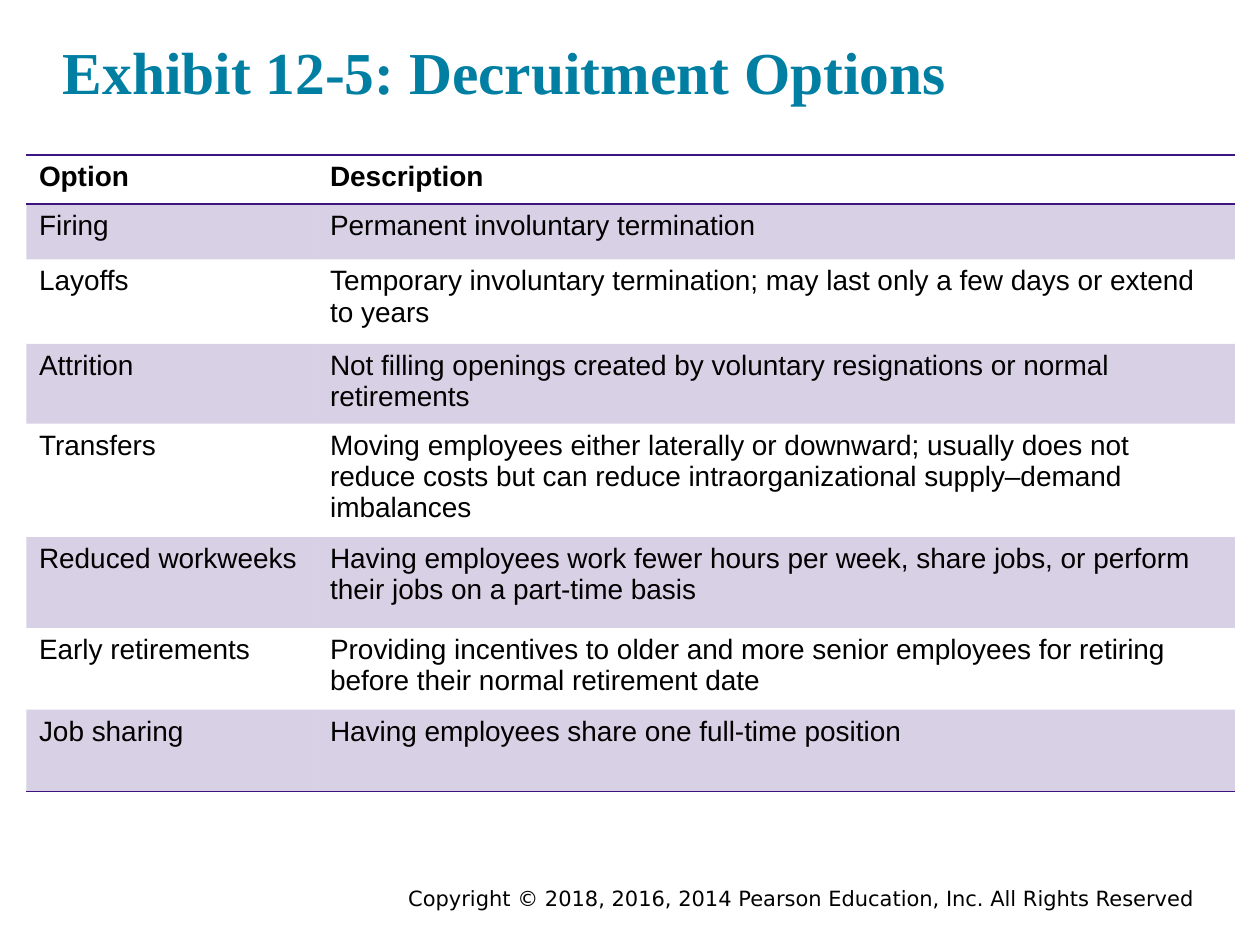
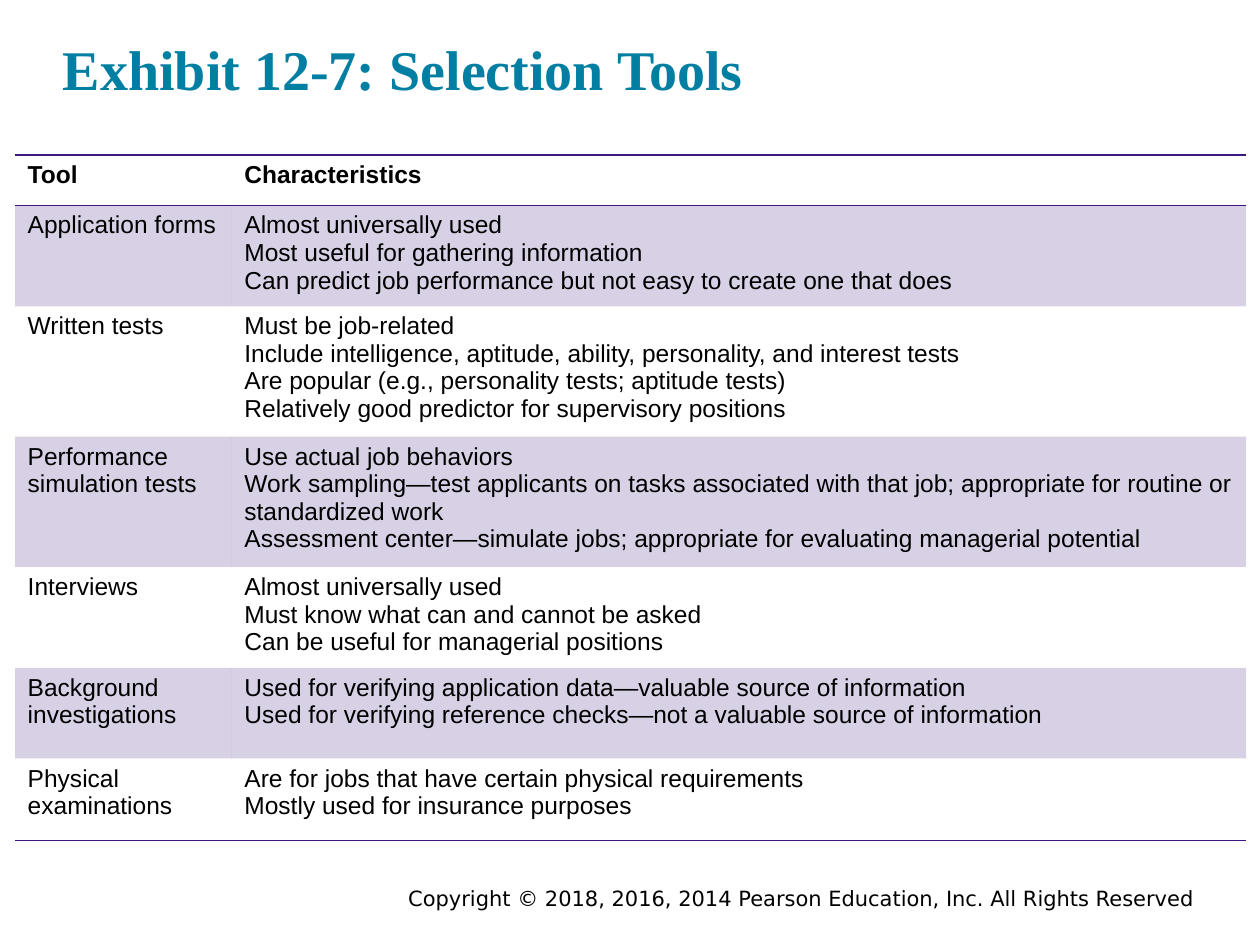
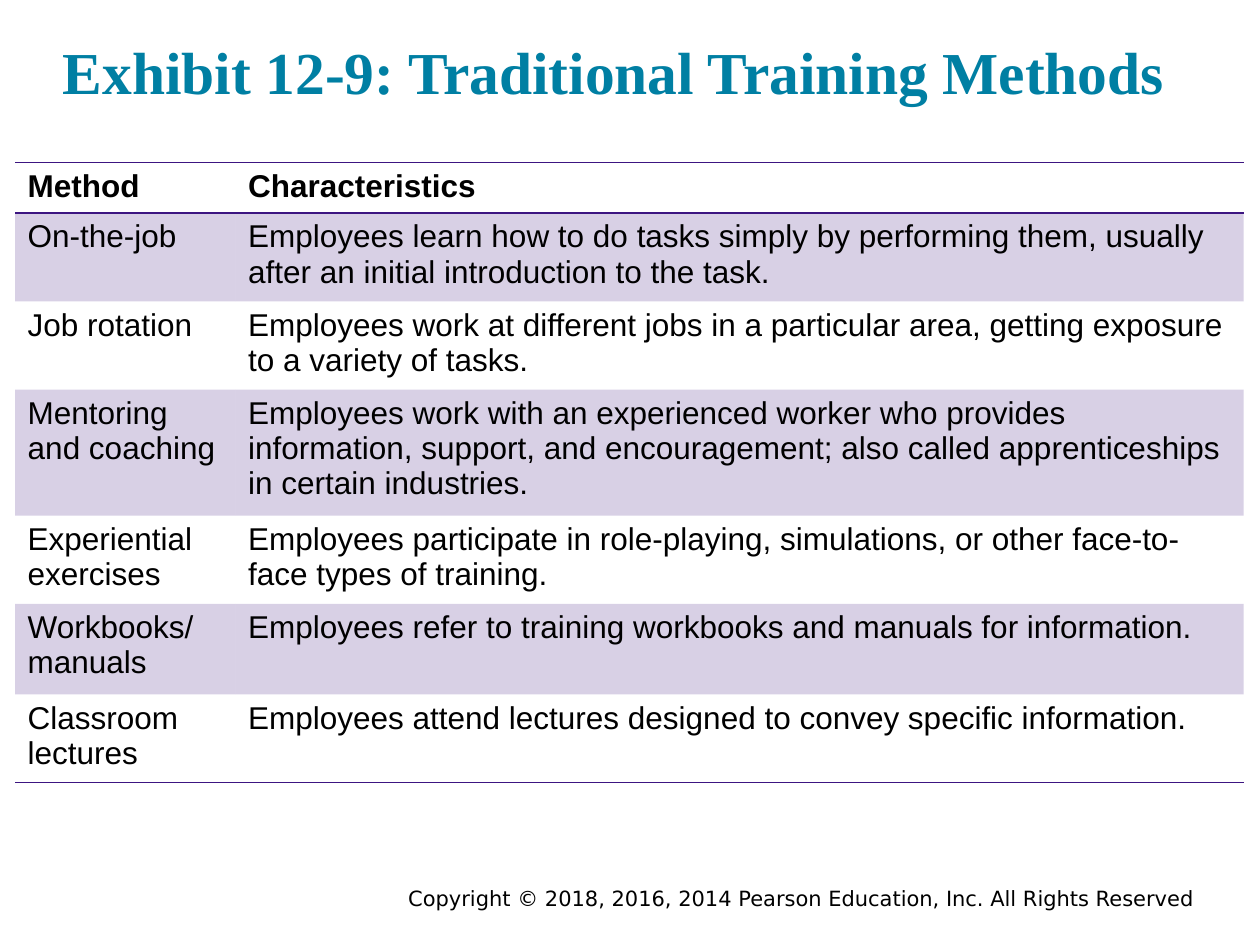
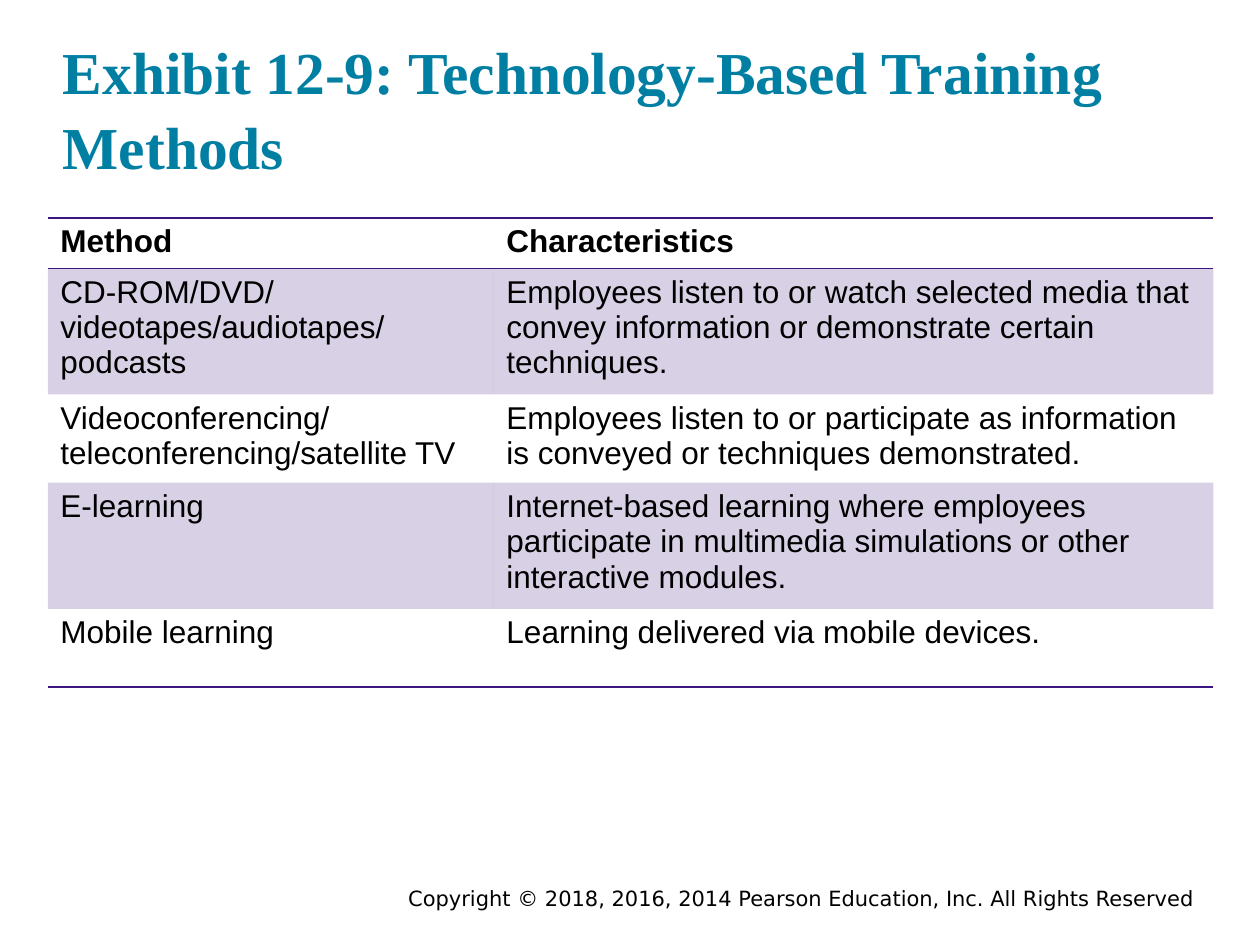
from lxml import etree
from pptx import Presentation
from pptx.dml.color import RGBColor
from pptx.enum.text import MSO_ANCHOR, PP_ALIGN
from pptx.oxml.ns import qn
from pptx.util import Inches, Pt

LEFT, RIGHT = PP_ALIGN.LEFT, PP_ALIGN.RIGHT
TOP = MSO_ANCHOR.TOP

TEAL = RGBColor(0x00, 0x7F, 0xA3)
PURPLE = RGBColor(0x3C, 0x15, 0x81)
BLACK = RGBColor(0x00, 0x00, 0x00)
BAND_OPACITY = 20  # percent
NO_STYLE = "{2D5ABB26-0587-4C30-8999-92F81FD0307C}"

FOOTER = "Copyright © 2018, 2016, 2014 Pearson Education, Inc. All Rights Reserved"

# Content: each row is (first column, second column); a list holds paragraphs
EXHIBITS = [
    {
        "title": "Exhibit 12-5: Decruitment Options", "title_size": 34,
        "at": (0.21, 1.23), "cols": (2.31, 7.28), "size": 16,
        "heights": (0.39, 0.44, 0.67, 0.62, 0.62, 0.72, 0.65, 0.65),
        "rows": [
            ("Option", "Description"),
            ("Firing", "Permanent involuntary termination"),
            ("Layoffs", "Temporary involuntary termination; may last only a few days "
                        "or extend to years"),
            ("Attrition", "Not filling openings created by voluntary resignations "
                          "or normal retirements"),
            ("Transfers", "Moving employees either laterally or downward; usually does "
                          "not reduce costs but can reduce intraorganizational "
                          "supply–demand imbalances"),
            ("Reduced workweeks", "Having employees work fewer hours per week, share "
                                  "jobs, or perform their jobs on a part-time basis"),
            ("Early retirements", "Providing incentives to older and more senior "
                                  "employees for retiring before their normal "
                                  "retirement date"),
            ("Job sharing", "Having employees share one full-time position"),
        ],
    },
    {
        "title": "Exhibit 12-7: Selection Tools", "title_size": 32,
        "at": (0.12, 1.23), "cols": (1.72, 8.05), "size": 14,
        "heights": (0.4, 0.44, 0.67, 0.62, 0.62, 0.72, 0.65),
        "rows": [
            ("Tool", "Characteristics"),
            ("Application forms", [
                "Almost universally used",
                "Most useful for gathering information",
                "Can predict job performance but not easy to create one that does"]),
            ("Written tests", [
                "Must be job-related",
                "Include intelligence, aptitude, ability, personality, and interest tests",
                "Are popular (e.g., personality tests; aptitude tests)",
                "Relatively good predictor for supervisory positions"]),
            ("Performance simulation tests", [
                "Use actual job behaviors",
                "Work sampling—test applicants on tasks associated with that job; "
                "appropriate for routine or standardized work",
                "Assessment center—simulate jobs; appropriate for evaluating "
                "managerial potential"]),
            ("Interviews", [
                "Almost universally used",
                "Must know what can and cannot be asked",
                "Can be useful for managerial positions"]),
            ("Background investigations", [
                "Used for verifying application data—valuable source of information",
                "Used for verifying reference checks—not a valuable source of "
                "information"]),
            ("Physical examinations", [
                "Are for jobs that have certain physical requirements",
                "Mostly used for insurance purposes"]),
        ],
    },
    {
        "title": "Exhibit 12-9: Traditional Training Methods", "title_size": 34,
        "at": (0.12, 1.29), "cols": (1.75, 8), "size": 18,
        "heights": (0.4, 0.44, 0.67, 0.62, 0.62, 0.72, 0.65),
        "rows": [
            ("Method", "Characteristics"),
            ("On-the-job", "Employees learn how to do tasks simply by performing them, "
                           "usually after an initial introduction to the task."),
            ("Job rotation", "Employees work at different jobs in a particular area, "
                             "getting exposure to a variety of tasks."),
            ("Mentoring and coaching", "Employees work with an experienced worker who "
                                       "provides information, support, and "
                                       "encouragement; also called apprenticeships in "
                                       "certain industries."),
            ("Experiential exercises", "Employees participate in role-playing, "
                                       "simulations, or other face-to-face types of "
                                       "training."),
            ("Workbooks/ manuals", "Employees refer to training workbooks and manuals "
                                   "for information."),
            ("Classroom lectures", "Employees attend lectures designed to convey "
                                   "specific information."),
        ],
    },
    {
        "title": "Exhibit 12-9: Technology-Based Training Methods", "title_size": 34,
        "at": (0.38, 1.73), "cols": (3.54, 5.71), "size": 18,
        "heights": (0.4, 0.44, 0.67, 0.62, 0.62),
        "rows": [
            ("Method", "Characteristics"),
            (["CD-ROM/DVD/", "videotapes/audiotapes/", "podcasts"],
             "Employees listen to or watch selected media that convey information or "
             "demonstrate certain techniques."),
            (["Videoconferencing/", "teleconferencing/satellite TV"],
             "Employees listen to or participate as information is conveyed or "
             "techniques demonstrated."),
            ("E-learning", "Internet-based learning where employees participate in "
                           "multimedia simulations or other interactive modules."),
            ("Mobile learning", "Learning delivered via mobile devices."),
        ],
    },
]


def write(tf, text, size, font="Arial", color=BLACK, bold=False, align=LEFT, spacing=None):
    """Fill a text frame with one paragraph per string."""
    paragraphs = [text] if isinstance(text, str) else text
    for i, line in enumerate(paragraphs):
        p = tf.paragraphs[0] if i == 0 else tf.add_paragraph()
        p.alignment = align
        if spacing:
            p.line_spacing = spacing
        r = p.add_run()
        r.text = line
        r.font.size, r.font.name, r.font.bold = Pt(size), font, bold
        r.font.color.rgb = color


def add_text(s, text, box, inset=None, **fmt):
    tf = s.shapes.add_textbox(*map(Inches, box)).text_frame
    tf.word_wrap = True
    tf.vertical_anchor = TOP
    if inset is not None:
        tf.margin_left = tf.margin_right = tf.margin_top = tf.margin_bottom = Inches(inset)
    write(tf, text, **fmt)


def add_rule(cell, side):
    """Draw a 1 pt border on the top (lnT) or bottom (lnB) of a cell."""
    ln = etree.SubElement(cell._tc.get_or_add_tcPr(), qn(f"a:{side}"), w=str(Pt(1)))
    fill = etree.SubElement(ln, qn("a:solidFill"))
    etree.SubElement(fill, qn("a:srgbClr"), val=str(PURPLE))


def shade(cell):
    cell.fill.solid()
    cell.fill.fore_color.rgb = PURPLE
    clr = cell._tc.tcPr.find(qn("a:solidFill")).find(qn("a:srgbClr"))
    etree.SubElement(clr, qn("a:alpha"), val=str(BAND_OPACITY * 1000))


def add_exhibit_table(s, at, cols, heights, rows, size):
    frame = s.shapes.add_table(len(rows), len(cols), *map(
        Inches, (*at, sum(cols), sum(heights))))
    table = frame.table
    table.first_row = table.horz_banding = False
    table._tbl.tblPr.find(qn("a:tableStyleId")).text = NO_STYLE
    for column, width in zip(table.columns, cols):
        column.width = Inches(width)
    for i, (row, height) in enumerate(zip(rows, heights)):
        table.rows[i].height = Inches(height)
        for j, text in enumerate(row):
            cell = table.cell(i, j)
            write(cell.text_frame, text, size, bold=i == 0)
            # Rules around the header and under the last row
            if i == 0:
                add_rule(cell, "lnT")
            if i in (0, len(rows) - 1):
                add_rule(cell, "lnB")
            # Tinted bands on odd rows
            if i % 2:
                shade(cell)
            else:
                cell.fill.background()


def main():
    prs = Presentation()
    prs.slide_width, prs.slide_height = Inches(10), Inches(7.5)
    blank = prs.slide_layouts[6]
    for ex in EXHIBITS:
        s = prs.slides.add_slide(blank)
        add_text(s, FOOTER, (1.75, 6.98, 7.83, 0.3), size=12, font="DejaVu Sans",
                 align=RIGHT)
        add_text(s, ex["title"], (0.5, 0.25, 9, 1.17), inset=0, size=ex["title_size"],
                 font="Times New Roman", color=TEAL, bold=True, spacing=1.05)
        add_exhibit_table(s, ex["at"], ex["cols"], ex["heights"], ex["rows"], ex["size"])
    prs.save("out.pptx")


if __name__ == "__main__":
    main()
